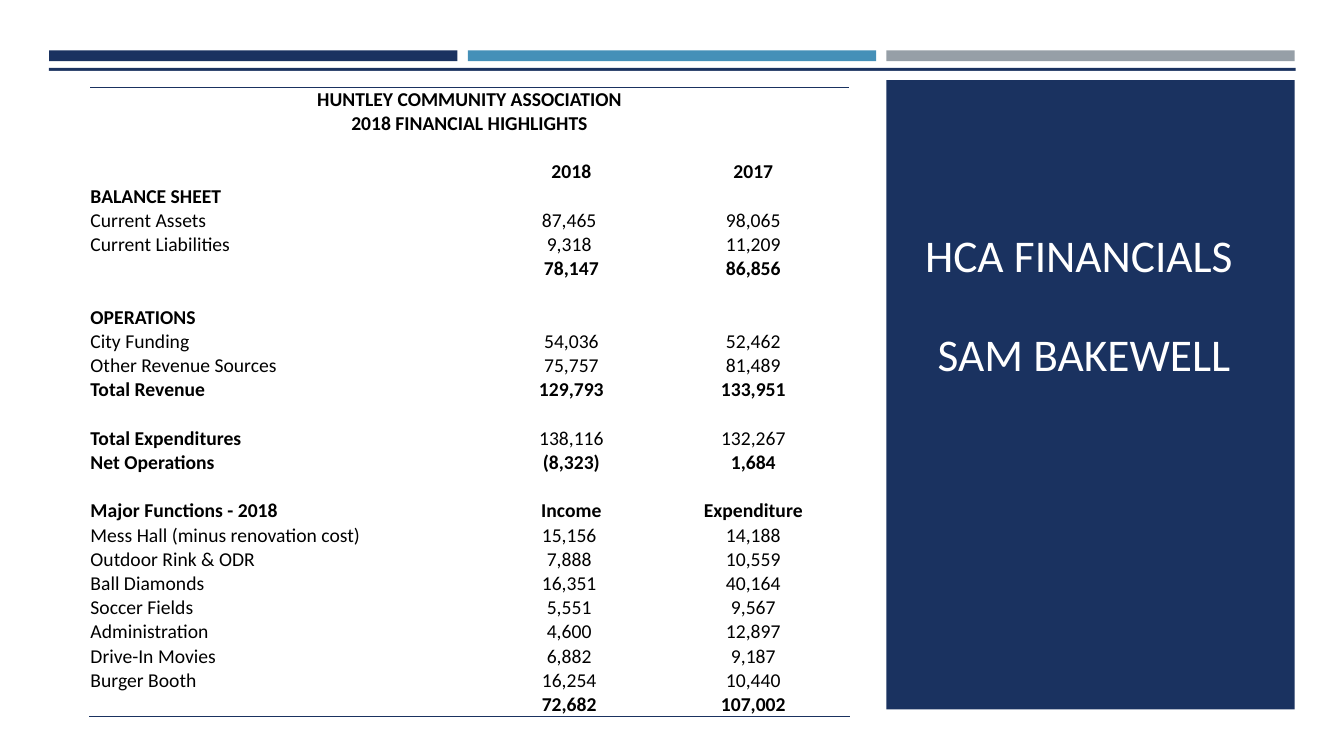
from dataclasses import dataclass

from lxml import etree
from pptx import Presentation
from pptx import util as u
from pptx.dml.color import RGBColor
from pptx.enum import shapes, text
from pptx.oxml.ns import qn


@dataclass(frozen=True)
class Theme:
    navy: str = "1A3260"
    blue: str = "4590B8"
    grey: str = "969FA7"
    white: str = "FFFFFF"
    black: str = "000000"
    font: str = "Calibri"
    title_size: float = 32.4
    table_size: float = 14


# Each row: bold columns, label, first value, second value
NONE, LABEL, ALL = (), (0,), (0, 1, 2)
GAP = (NONE, "", "", "")
FINANCIALS = [
    (ALL, "HUNTLEY COMMUNITY ASSOCIATION", "", ""),
    (ALL, "2018 FINANCIAL HIGHLIGHTS", "", ""),
    GAP,
    (ALL, "", "2018", "2017"),
    (ALL, "BALANCE SHEET", "", ""),
    (NONE, "Current Assets", "87,465 ", "98,065"),
    (NONE, "Current Liabilities", "9,318 ", "11,209"),
    (ALL, "", "78,147", "86,856"),
    GAP,
    (ALL, "OPERATIONS", "", ""),
    (NONE, "City Funding", "54,036", "52,462"),
    (NONE, "Other Revenue Sources", "75,757", "81,489"),
    (ALL, "Total Revenue", "129,793", "133,951"),
    GAP,
    (LABEL, "Total Expenditures", "138,116", "132,267"),
    (ALL, "Net Operations", "(8,323)", "1,684"),
    GAP,
    (ALL, "Major Functions - 2018", " Income ", " Expenditure "),
    (NONE, "Mess Hall (minus renovation cost)", "15,156 ", "14,188"),
    (NONE, "Outdoor Rink & ODR", "7,888 ", "10,559"),
    (NONE, "Ball Diamonds", "16,351 ", "40,164"),
    (NONE, "Soccer Fields", "5,551 ", "9,567"),
    (NONE, "Administration", "4,600 ", "12,897"),
    (NONE, "Drive-In Movies", "6,882 ", "9,187"),
    (NONE, "Burger Booth", "16,254 ", "10,440"),
    (ALL, "", "72,682 ", "107,002"),
]
HEADING_ROWS = 2


class SlideBuilder:
    def __init__(self, slide, theme):
        self.slide, self.theme = slide, theme

    def block(self, left, top, width, height, color):
        block = self.slide.shapes.add_shape(
            shapes.MSO_SHAPE.RECTANGLE, *map(u.Cm, (left, top, width, height)))
        block.shadow.inherit = False
        block.fill.solid()
        block.fill.fore_color.rgb = RGBColor.from_string(color)
        block.line.fill.background()

    def set_words(self, paragraph, words, size, color, bold=False, centred=True):
        paragraph.text = words
        paragraph.alignment = text.PP_ALIGN.CENTER if centred else text.PP_ALIGN.LEFT
        for run in paragraph.runs:
            run.font.name, run.font.size, run.font.bold = self.theme.font, u.Pt(size), bold
            run.font.color.rgb = RGBColor.from_string(color)
        if not words:  # keeps empty cells as low as the filled ones
            etree.SubElement(paragraph._p, qn("a:endParaRPr"), sz=str(int(size * 100)))

    def title(self, left, top, width, height, lines):
        frame = self.slide.shapes.add_textbox(
            *map(u.Cm, (left, top, width, height))).text_frame
        frame.word_wrap = True
        frame.vertical_anchor = text.MSO_ANCHOR.BOTTOM
        for i, line in enumerate(lines):
            paragraph = frame.add_paragraph() if i else frame.paragraphs[0]
            self.set_words(paragraph, line, self.theme.title_size, self.theme.white)
            paragraph.line_spacing = 0.9
            if i:
                paragraph.space_before = u.Pt(35.5)

    def border(self, cell, side):
        line = etree.SubElement(cell._tc.get_or_add_tcPr(), qn(f"a:{side}"), w=str(u.Pt(1)))
        fill = etree.SubElement(line, qn("a:solidFill"))
        etree.SubElement(fill, qn("a:srgbClr"), val=self.theme.navy)

    def table(self, left, top, widths, row_height, rows):
        table = self.slide.shapes.add_table(
            len(rows), len(widths), u.Cm(left), u.Cm(top),
            u.Cm(sum(widths)), u.Cm(row_height * len(rows))).table
        table.first_row = table.horz_banding = False
        for column, width in zip(table.columns, widths):
            column.width = u.Cm(width)
        for r, (bold_columns, *entries) in enumerate(rows):
            table.rows[r].height = u.Cm(row_height)
            for c, entry in enumerate(entries):
                cell = table.cell(r, c)
                cell.margin_left = cell.margin_right = u.Cm(0.02)
                cell.margin_top, cell.margin_bottom = u.Cm(0.01), 0
                cell.vertical_anchor = text.MSO_ANCHOR.BOTTOM
                if r == 0:
                    self.border(cell, "lnT")
                if r == len(rows) - 1:
                    self.border(cell, "lnB")
                cell.fill.background()
                self.set_words(cell.text_frame.paragraphs[0], entry, self.theme.table_size,
                               self.theme.black, c in bold_columns, c > 0 or r < HEADING_ROWS)
        for r in range(HEADING_ROWS):
            table.cell(r, 0).merge(table.cell(r, len(widths) - 1))


def main():
    deck = Presentation()
    deck.slide_width, deck.slide_height = u.Cm(33.87), u.Cm(19.05)
    theme = Theme()
    page = SlideBuilder(deck.slides.add_slide(deck.slide_layouts[6]), theme)

    # Navy band, covered by the white page so that its top edge forms a rule
    page.block(1.23, 1.71, 31.42, 3.3, theme.navy)
    page.block(0, 1.79, 33.87, 17.26, theme.white)

    # Three bars across the top
    bar_left, bar_width, bar_step = 1.24, 10.29, 10.55
    for i, color in enumerate((theme.navy, theme.blue, theme.grey)):
        page.block(bar_left + i * bar_step, 1.27, bar_width, 0.27, color)

    # Title panel
    page.block(bar_left + 2 * bar_step, 2.02, bar_width, 15.86, theme.navy)
    page.title(23.04, 3.94, 8.56, 5.79, ("HCA FINANCIALS ", "SAM BAKEWELL"))

    # Financial highlights
    page.table(2.26, 2.2, (9.98, 4.32, 4.85), 0.61, FINANCIALS)

    deck.save("out.pptx")


if __name__ == "__main__":
    main()
